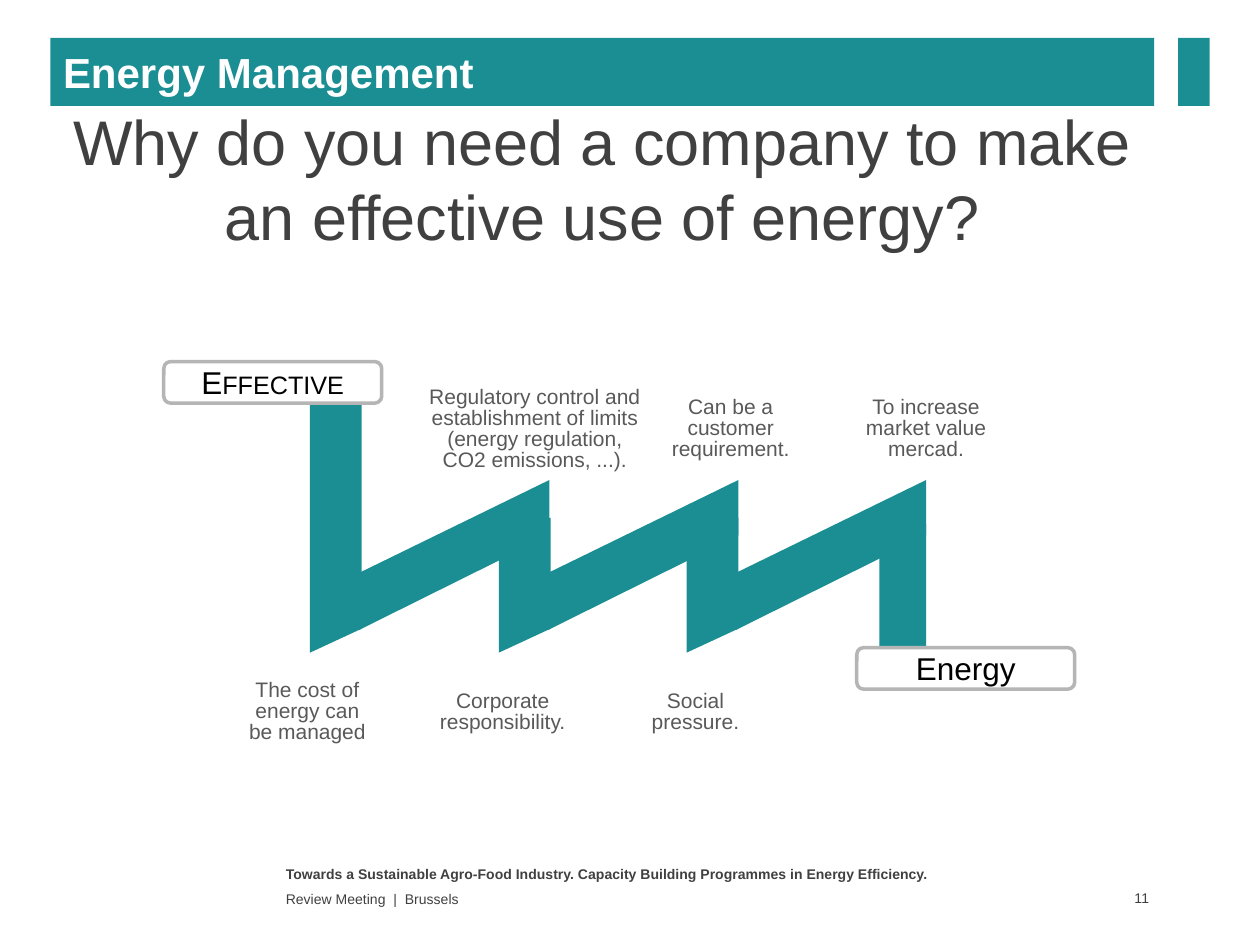
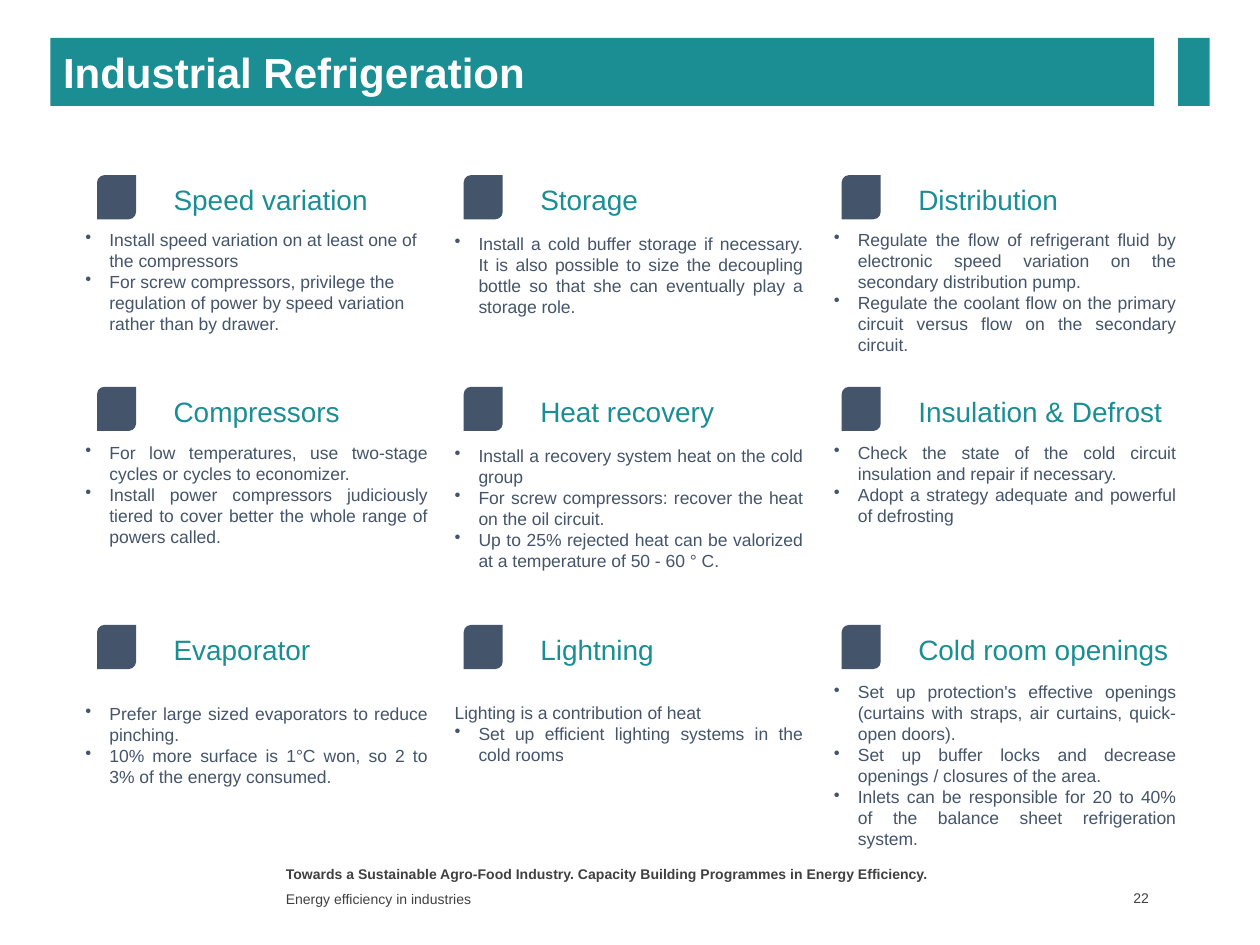
from dataclasses import dataclass

from lxml.etree import SubElement
from pptx import Presentation
from pptx.dml.color import RGBColor
from pptx.enum.shapes import MSO_SHAPE
from pptx.enum.text import MSO_ANCHOR, MSO_AUTO_SIZE, PP_ALIGN
from pptx.oxml.ns import qn
from pptx.util import Inches, Pt


@dataclass(frozen=True)
class Theme:
    face: str = "Arial"
    teal: str = "1B8E94"
    slate: str = "44546A"
    dark: str = "404040"
    gray: str = "595959"
    edge: str = "B5B5B5"
    black: str = "000000"
    white: str = "FFFFFF"
    title: int = 24
    lead: int = 36
    tag: int = 18
    head: int = 16
    note: int = 12
    body: int = 10
    foot: int = 8


THEME = Theme()
LEFT, MID, RIGHT, FULL = (
    PP_ALIGN.LEFT, PP_ALIGN.CENTER, PP_ALIGN.RIGHT, PP_ALIGN.JUSTIFY)

# Shared content
BAND = (0.4, 0.3, 8.76, 0.54)
BLOCK = (9.35, 0.3, 0.25, 0.54)
MOTTO = ("Towards a Sustainable Agro-Food Industry. "
         "Capacity Building Programmes in Energy Efficiency.")

# Energy management: notes as (text, left, top, width, height)
LEAD = "Why do you need a company to make an effective use of energy?"
NOTES = [
    ("The cost of energy can be managed", 1.84, 5.35, 1.2, 0.61),
    ("Corporate responsibility.", 3.39, 5.44, 1.2, 0.45),
    ("Social pressure.", 4.92, 5.44, 1.2, 0.45),
    ("Regulatory control and establishment of limits "
     "(energy regulation, CO2 emissions, ...).", 3.29, 3.03, 1.91, 0.78),
    ("Can be a customer requirement.", 5.2, 3.11, 1.2, 0.61),
    ("To increase market value mercad.", 6.75, 3.11, 1.2, 0.61),
]
TAGS = [("Effective", 1.3, 2.87, True), ("Energy", 6.8, 5.14, False)]
BARS = [(2.46, 3.2), (3.96, 4.11), (5.45, 4.11)]  # left, top
POST = (6.98, 4.16, 0.37, 0.98)

# Refrigeration: columns as (icon left, body left, body width)
COLS = [(0.77, 0.58, 2.91), (3.68, 3.51, 2.96), (6.68, 6.52, 2.91)]
ROWS = [1.39, 3.07, 4.96]  # icon tops
# Each topic: heading, body top, alignment, plain intro, bullets
TOPICS = [
    [("Speed variation", 1.77, LEFT, "", [
        "Install speed variation on at least one of the compressors",
        "For screw compressors, privilege the regulation of power by speed "
        "variation rather than by drawer."]),
     ("Storage", 1.8, FULL, "", [
         "Install a cold buffer storage if necessary. It is also possible to "
         "size the decoupling bottle so that she can eventually play a "
         "storage role."]),
     ("Distribution", 1.77, FULL, "", [
         "Regulate the flow of refrigerant fluid by electronic speed "
         "variation on the secondary distribution pump.",
         "Regulate the coolant flow on the primary circuit versus flow on "
         "the secondary circuit."])],
    [("Compressors", 3.46, FULL, "", [
        "For low temperatures, use two-stage cycles or cycles to economizer.",
        "Install power compressors judiciously tiered to cover better the "
        "whole range of powers called."]),
     ("Heat recovery", 3.48, FULL, "", [
         "Install a recovery system heat on the cold group",
         "For screw compressors: recover the heat on the oil circuit.",
         "Up to 25% rejected heat can be valorized at a temperature of "
         "50 - 60 ° C."]),
     ("Insulation & Defrost", 3.46, FULL, "", [
         "Check the state of the cold circuit insulation and repair if "
         "necessary.",
         "Adopt a strategy adequate and powerful of defrosting"])],
    [("Evaporator", 5.53, FULL, "", [
        "Prefer large sized evaporators to reduce pinching.",
        "10% more surface is 1°C won, so 2 to 3% of the energy consumed."]),
     ("Lightning", 5.52, FULL, "Lighting is a contribution of heat", [
         "Set up efficient lighting systems in the cold rooms"]),
     ("Cold room openings", 5.36, FULL, "", [
         "Set up protection's effective openings (curtains with straps, air "
         "curtains, quick-open doors).",
         "Set up buffer locks and decrease openings / closures of the area.",
         "Inlets can be responsible for 20 to 40% of the balance sheet "
         "refrigeration system."])],
]


# Helpers
def apply(item, **form):
    for key, val in form.items():
        setattr(item, key, val)


def place(at):
    return [Inches(val) for val in at]


def ink(font, size, tint, bold=False):
    apply(font, name=THEME.face, size=Pt(size), bold=bold)
    font.color.rgb = RGBColor.from_string(tint)


def paint(shape, fill, line=None):
    shape.shadow.inherit = False
    shape.fill.solid()
    shape.fill.fore_color.rgb = RGBColor.from_string(fill)
    if line:
        shape.line.color.rgb = RGBColor.from_string(line)
        shape.line.width = Pt(2)
    else:
        shape.line.fill.background()


def mark(para):
    props = para._p.get_or_add_pPr()
    props.set("marL", str(Inches(0.19)))
    props.set("indent", str(-Inches(0.19)))
    SubElement(props, qn("a:buChar")).set("char", "•")


def write(slide, at, lines, size, tint, bold=False, align=LEFT, lead=None,
          anchor=MSO_ANCHOR.TOP, dots=0, **form):
    """Add a text box; the last `dots` lines get bullets."""
    frame = slide.shapes.add_textbox(*place(at)).text_frame
    apply(frame, word_wrap=True, vertical_anchor=anchor, **form)
    for num, text in enumerate(lines):
        para = frame.paragraphs[0] if num == 0 else frame.add_paragraph()
        if num >= len(lines) - dots:
            mark(para)
        apply(para, text=text, alignment=align)
        if lead:
            para.line_spacing = Pt(lead)
        ink(para.font, size, tint, bold)
    return frame


def draw(slide, kind, at, fill, line=None):
    shape = slide.shapes.add_shape(kind, *place(at))
    paint(shape, fill, line)
    return shape


def trace(slide, *pts):
    pts = [place(pt) for pt in pts]
    pen = slide.shapes.build_freeform(*pts[0])
    pen.add_line_segments(pts[1:], close=True)
    paint(pen.convert_to_shape(), THEME.teal)


def start(deck, title, topic, page):
    """Add a slide with its title band and footer."""
    slide = deck.slides.add_slide(deck.slide_layouts[5])
    band = slide.shapes.title
    left, top, width, height = place(BAND)
    apply(band, left=left, top=top, width=width, height=height)
    band.fill.solid()
    band.fill.fore_color.rgb = RGBColor.from_string(THEME.teal)
    apply(band.text_frame, text=title, auto_size=MSO_AUTO_SIZE.NONE,
          vertical_anchor=MSO_ANCHOR.MIDDLE)
    para = band.text_frame.paragraphs[0]
    para.alignment = LEFT
    ink(para.font, THEME.title, THEME.white, True)
    draw(slide, MSO_SHAPE.RECTANGLE, BLOCK, THEME.teal)

    foot = dict(size=THEME.foot, tint=THEME.dark)
    write(slide, (2.17, 6.82, 5.5, 0.21), [MOTTO], bold=True, **foot)
    foot["anchor"] = MSO_ANCHOR.MIDDLE
    write(slide, (2.17, 7.04, 5.5, 0.19), [topic], **foot)
    write(slide, (8.6, 7.03, 0.56, 0.2), [page], align=RIGHT,
          margin_right=Inches(0.04), **foot)
    return slide


# Slides
def energy(deck):
    slide = start(deck, "Energy Management",
                  "Review Meeting  |  Brussels", "11")
    write(slide, (0.4, 0.84, 8.76, 1.14), [LEAD], THEME.lead, THEME.dark,
          align=MID, lead=43.3, anchor=MSO_ANCHOR.MIDDLE)

    # Zigzag: each bar drops, then a ramp climbs to the next one
    for x, top in BARS:
        trace(slide, (x, top), (x + 0.41, top), (x + 0.41, 4.99), (x, 5.18))
        trace(slide, (x + 0.2, 4.64), (x + 1.9, 3.81),
              (x + 1.9, 4.25), (x + 0.39, 5))
    draw(slide, MSO_SHAPE.RECTANGLE, POST, THEME.teal)

    # Tags at both ends
    for text, x, y, caps in TAGS:
        draw(slide, MSO_SHAPE.ROUNDED_RECTANGLE, (x, y, 1.73, 0.33),
             THEME.white, THEME.edge)
        frame = write(slide, (x + 0.18, y - 0.04, 1.37, 0.4), [text],
                      THEME.tag, THEME.black, align=MID)
        if caps:
            run = frame.paragraphs[0].runs[0]
            run.font._element.set("cap", "small")

    for text, *at in NOTES:
        write(slide, at, [text], THEME.note, THEME.gray, align=MID, lead=12)


def cooling(deck):
    slide = start(deck, "Industrial Refrigeration",
                  "Energy efficiency in industries", "22")
    for y, row in zip(ROWS, TOPICS):
        for (x, left, width), topic in zip(COLS, row):
            head, top, align, intro, items = topic
            icon = draw(slide, MSO_SHAPE.ROUND_2_DIAG_RECTANGLE,
                        (x, y, 0.31, 0.35), THEME.slate)
            icon.adjustments[0] = 0.188
            icon.adjustments[1] = 0
            write(slide, (x + 0.51, y + 0.01, 2.3, 0.37), [head],
                  THEME.head, THEME.teal)
            lines = [intro] * bool(intro) + items
            write(slide, (left, top, width, 1.2), lines, THEME.body,
                  THEME.slate, align=align, lead=12, dots=len(items))


def main():
    deck = Presentation()
    apply(deck, slide_width=Inches(10), slide_height=Inches(7.5))
    energy(deck)
    cooling(deck)
    deck.save("out.pptx")


if __name__ == "__main__":
    main()
